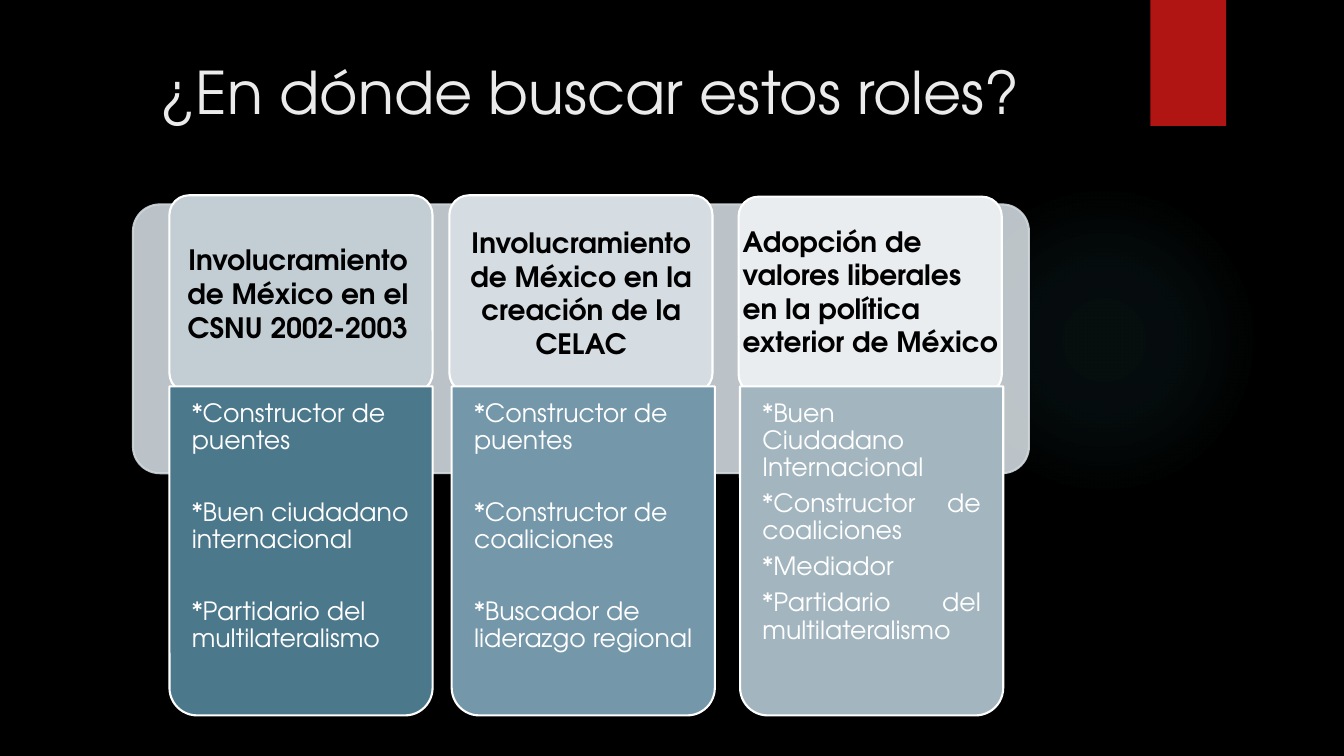
from dataclasses import dataclass
from pptx import Presentation
from pptx.dml.color import RGBColor as Rgb
from pptx.enum.shapes import MSO_SHAPE as Kind
from pptx.enum.text import MSO_ANCHOR as Anchor, MSO_AUTO_SIZE as Fit, PP_ALIGN as Align
from pptx.oxml import parse_xml as make
from pptx.oxml.ns import nsdecls, qn
from pptx.util import Pt


@dataclass(frozen=True)
class Theme:
    """Colours, font and type sizes."""
    font: str = "TeX Gyre Adventor"
    back: str = "000000"
    light: str = "EBEBEB"
    white: str = "FFFFFF"
    red: str = "B01513"
    glow: str = "50B9C1"
    band: str = "D1D9DE"
    heads: tuple = ("C3CED4", "D6DDE2", "E9EDEF")
    bodies: tuple = ("4C788C", "7497AA", "A3B6C0")
    title: int = 42
    head: int = 20
    body: int = 18


class Deck:
    """Holds the theme and the current slide."""

    def __init__(self, theme):
        """Open a blank slide."""
        self.theme = theme
        self.show = Presentation()
        self.show.slide_width, self.show.slide_height = Pt(960), Pt(540)
        self.slide = self.show.slides.add_slide(self.show.slide_layouts[6])
        fill = self.slide.background.fill
        fill.solid()
        fill.fore_color.rgb = Rgb.from_string(theme.back)

    def shape(self, kind, box, tint, edge=None, adj=(), turn=0):
        """Draw a filled shape."""
        item = self.slide.shapes.add_shape(kind, *map(Pt, box))
        item.shadow.inherit = False
        item.rotation = turn
        for i, size in enumerate(adj):
            item.adjustments[i] = size
        item.fill.solid()
        item.fill.fore_color.rgb = Rgb.from_string(tint)
        if edge:
            item.line.color.rgb = Rgb.from_string(edge)
            item.line.width = Pt(1.5)
        else:
            item.line.fill.background()
        return item

    def fade(self, item, part):
        """Make fill and line partly clear."""
        for tone in item._element.spPr.iter(qn("a:srgbClr")):
            tone.append(make(f'<a:alpha {nsdecls("a")} val="{part * 1000}"/>'))

    def glow(self, box, tint, stops):
        """Draw a soft round glow."""
        item = self.shape(Kind.OVAL, box, tint)
        marks = "".join(
            f'<a:gs pos="{pos * 1000}"><a:srgbClr val="{tint}">'
            f'<a:alpha val="{part * 1000}"/></a:srgbClr></a:gs>'
            for pos, part in stops)
        props = item._element.spPr
        props.replace(props.find(qn("a:solidFill")), make(
            f'<a:gradFill {nsdecls("a")}><a:gsLst>{marks}</a:gsLst>'
            '<a:path path="circle"><a:fillToRect l="50000" t="50000" '
            'r="50000" b="50000"/></a:path></a:gradFill>'))

    def text(self, box, lines, size, tint, align=Align.LEFT, bold=False,
             pad=None, lead=None, gap=None, grow=False):
        """Write paragraphs in a wrapped box."""
        frame = self.slide.shapes.add_textbox(*map(Pt, box)).text_frame
        frame.word_wrap = True
        frame.vertical_anchor = Anchor.TOP
        frame.auto_size = Fit.SHAPE_TO_FIT_TEXT if grow else Fit.NONE
        if pad:
            frame.margin_left = frame.margin_right = Pt(pad)
            frame.margin_top = frame.margin_bottom = Pt(pad)
        frame.text = "\n".join(lines)
        for para in frame.paragraphs:
            para.alignment = align
            if lead:
                para.line_spacing = lead
            if gap:
                para.space_after = Pt(gap)
            for run in para.runs:
                font = run.font
                font.name, font.size, font.bold = self.theme.font, Pt(size), bold
                font.color.rgb = Rgb.from_string(tint)

    def card(self, x, top, low, tints, label, roles, align, gap):
        """Draw one column with its heading and roles."""
        theme = self.theme
        side, head = label[0], label[1:]
        self.shape(Kind.ROUNDED_RECTANGLE, (x, top, 188, 141), tints[0],
                   theme.white, (0.1,))
        self.shape(Kind.ROUND_2_SAME_RECTANGLE, (low, 276, 188, 235), tints[1],
                   theme.white, (0.105, 0), 180)
        self.text((low + 6, 276, 176, 229), roles, theme.body, theme.white,
                  align, pad=10, lead=0.9, gap=gap)
        self.text(head[0], head[1:], theme.head, theme.back, side, True, grow=True)


def main():
    """Build the slide."""
    theme = Theme()
    deck = Deck(theme)
    deck.glow((677.5, 131.8, 221.8, 221.8), theme.glow, ((0, 7), (36, 6), (69, 0), (100, 0)))
    deck.shape(Kind.RECTANGLE, (821.8, 0, 54, 90), theme.red)
    deck.text((51, 36, 741, 110), ["¿En dónde buscar estos roles?"],
              theme.title, theme.light, Align.CENTER)
    band = deck.shape(Kind.ROUNDED_RECTANGLE, (95, 146, 640, 192), theme.band,
                      theme.band, (0.1,))
    deck.fade(band, 90)
    cards = (
        (121, 139.5, 121,
         (Align.CENTER, (117.4, 170, 190.8, 80),
          "Involucramiento de México en el CSNU 2002-2003"),
         ("*Constructor de puentes", "*Buen ciudadano internacional",
          "*Partidario del multilateralismo"), Align.LEFT, 32),
        (321, 139.5, 322.6,
         (Align.CENTER, (319.7, 157.7, 190.8, 104.4),
          "Involucramiento de México en la creación de la CELAC"),
         ("*Constructor de puentes", "*Constructor de coaliciones",
          "*Buscador de liderazgo regional"), Align.LEFT, 32),
        (527.6, 140.5, 528.6,
         (Align.LEFT, (523.4, 156.5, 198.7, 104.4),
          "Adopción de valores liberales en la política exterior de México"),
         ("*Buen Ciudadano Internacional", "*Constructor de coaliciones",
          "*Mediador", "*Partidario del multilateralismo"), Align.JUSTIFY, 6.3),
    )
    for tints, (x, top, low, *rest) in zip(zip(theme.heads, theme.bodies), cards):
        deck.card(x, top, low, tints, *rest)
    deck.show.save("out.pptx")


if __name__ == "__main__":
    main()
